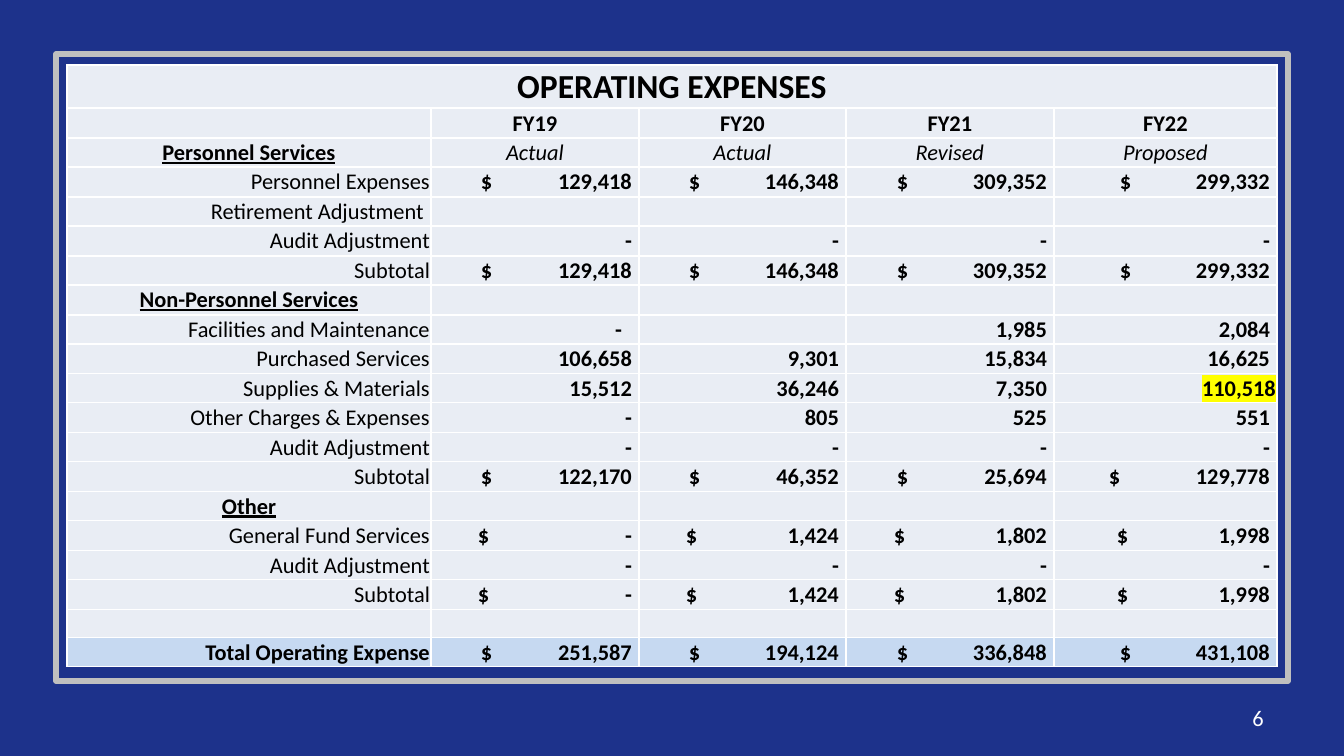
"""Build the operating expenses slide."""
import dataclasses

import lxml.etree
import pptx
import pptx.dml.color
import pptx.enum.shapes
import pptx.enum.text
import pptx.oxml.ns
import pptx.util

ALIGN = pptx.enum.text.PP_ALIGN
MIDDLE = pptx.enum.text.MSO_ANCHOR.MIDDLE
qn = pptx.oxml.ns.qn


@dataclasses.dataclass(frozen=True)
class Theme:
    """Colours, font and type sizes of the slide."""
    background: str = "1D328B"
    frame: str = "BFBFBF"
    cell: str = "E9EDF4"
    total: str = "C6D9F1"
    rule: str = "FFFFFF"
    ink: str = "000000"
    page: str = "FFFFFF"
    marker: str = "FFFF00"
    font: str = "Calibri"
    heading: int = 18
    body: int = 12
    spacer: int = 10


THEME = Theme()
COLUMNS = (364, 208, 207, 208, 223)
HEIGHTS = [43] + [30, 29] * 8 + [30, 28, 29]
EDGE, AMOUNT_EDGE, DASH_EDGE = 1, 7, 17

SIGNS = (50, 50, 51, 66)
SUBTOTAL_SIGNS = (50, 50, 51, 55)
OTHER_SIGNS = (47, 47, 48, 63)

YEARS = ("FY19", "FY20", "FY21", "FY22")
STAGES = ("Actual", "Actual", "Revised", "Proposed")
PERSONNEL = ("$ 129,418", "$ 146,348", "$ 309,352", "$ 299,332")
OTHER = ("$ -", "$ 1,424", "$ 1,802", "$ 1,998")
BLANK = ("",) * 4
DASHES = ("-",) * 4
LINES = (
    ("Personnel Expenses", PERSONNEL, SIGNS),
    ("Retirement Adjustment", BLANK, SIGNS),
    ("Audit Adjustment", DASHES, SIGNS),
    ("Subtotal", PERSONNEL, SIGNS),
    ("Non-Personnel Services", BLANK, SIGNS),
    ("Facilities and Maintenance", ("-", "", "1,985", "2,084"), SIGNS),
    ("Purchased Services", ("106,658", "9,301", "15,834", "16,625"), SIGNS),
    ("Supplies & Materials", ("15,512", "36,246", "7,350", "110,518"), SIGNS),
    ("Other Charges & Expenses", ("-", "805", "525", "551"), SIGNS),
    ("Audit Adjustment", DASHES, SIGNS),
    ("Subtotal", ("$ 122,170", "$ 46,352", "$ 25,694", "$ 129,778"), SUBTOTAL_SIGNS),
    ("Other", BLANK, SIGNS),
    ("General Fund Services", OTHER, OTHER_SIGNS),
    ("Audit Adjustment", DASHES, SIGNS),
    ("Subtotal", OTHER, OTHER_SIGNS),
    ("", BLANK, SIGNS),
    ("Total Operating Expense",
     ("$ 251,587", "$ 194,124", "$ 336,848", "$ 431,108"), SIGNS),
)
SECTIONS = ("Personnel Services", "Non-Personnel Services", "Other")


def px(length):
    """Turn px into EMU."""
    return pptx.util.Emu(round(length * 9144000 / 1344))


def rgb(value):
    """Turn a hex string into a colour."""
    return pptx.dml.color.RGBColor.from_string(value)


def put_text(frame, text, size=THEME.body, color=THEME.ink, align=ALIGN.RIGHT,
             bold=False, italic=False, underline=False, marker=None, tabs=()):
    """Write one formatted paragraph into a text frame."""
    paragraph = frame.paragraphs[0]
    paragraph.alignment = align
    if not text:
        lxml.etree.SubElement(paragraph._p, qn("a:endParaRPr"), sz=str(size * 100))
        return
    if tabs:
        stops = lxml.etree.SubElement(paragraph._p.get_or_add_pPr(), qn("a:tabLst"))
        for position, side in tabs:
            lxml.etree.SubElement(stops, qn("a:tab"), pos=str(px(position)), algn=side)
    run = paragraph.add_run()
    run.text = text
    font = run.font
    font.name, font.size = THEME.font, pptx.util.Pt(size)
    font.bold, font.italic, font.underline = bold, italic, underline
    font.color.rgb = rgb(color)
    if marker:
        highlight = lxml.etree.Element(qn("a:highlight"))
        lxml.etree.SubElement(highlight, qn("a:srgbClr"), val=marker)
        run._r.rPr.find(qn("a:solidFill")).addnext(highlight)


class SlideBuilder:
    """Hold the theme and the current slide."""

    def __init__(self, slide, theme):
        """Paint the background of the slide."""
        self.slide, self.theme = slide, theme
        slide.background.fill.solid()
        slide.background.fill.fore_color.rgb = rgb(theme.background)

    def frame(self, *box):
        """Draw the outline around the table."""
        border = self.slide.shapes.add_shape(
            pptx.enum.shapes.MSO_SHAPE.RECTANGLE, *map(px, box))
        border.shadow.inherit = False
        border.fill.background()
        border.line.color.rgb = rgb(self.theme.frame)
        border.line.width = pptx.util.Pt(3)

    def page_number(self, number, *box):
        """Write the page number."""
        page = self.slide.shapes.add_textbox(*map(px, box)).text_frame
        page.word_wrap = True
        page.vertical_anchor = MIDDLE
        put_text(page, number, color=self.theme.page)

    def table(self, left, top):
        """Add the empty table and return it."""
        expenses = self.slide.shapes.add_table(
            len(HEIGHTS), len(COLUMNS), px(left), px(top),
            px(sum(COLUMNS)), px(sum(HEIGHTS))).table
        expenses.first_row = expenses.horz_banding = False
        for column, width in zip(expenses.columns, COLUMNS):
            column.width = px(width)
        for row, height in zip(expenses.rows, HEIGHTS):
            row.height = px(height)
        return expenses

    def cell(self, cell, text, fill=THEME.cell, edge=EDGE, **text_format):
        """Fill, rule and write one cell."""
        cell.vertical_anchor = MIDDLE
        cell.margin_left, cell.margin_right = px(EDGE), px(edge)
        cell.margin_top, cell.margin_bottom = px(EDGE), 0
        cell.fill.solid()
        cell.fill.fore_color.rgb = rgb(fill)
        for place, side in enumerate(("lnL", "lnR", "lnT", "lnB")):
            rule = lxml.etree.Element(qn(f"a:{side}"), w=str(pptx.util.Pt(1)))
            paint = lxml.etree.SubElement(rule, qn("a:solidFill"))
            lxml.etree.SubElement(paint, qn("a:srgbClr"), val=self.theme.rule)
            cell._tc.tcPr.insert(place, rule)
        put_text(cell.text_frame, text, **text_format)

    def label(self, cell, text, **text_format):
        """Write a section heading or a line label."""
        if text in SECTIONS:
            text_format.update(align=ALIGN.CENTER, bold=True, underline=True)
        edge = AMOUNT_EDGE if text == "Retirement Adjustment" else EDGE
        self.cell(cell, text, edge=edge, **text_format)

    def amount(self, cell, text, width, sign, **text_format):
        """Write an amount, with its dollar sign on a tab stop of its own."""
        if text.startswith("$"):
            text = "\t" + text.replace(" ", "\t")
            text_format.update(align=ALIGN.LEFT, tabs=(
                (sign - EDGE, "l"), (width - AMOUNT_EDGE - EDGE, "r")))
        self.cell(cell, text, bold=True, **text_format)


def main():
    """Build and save the slide."""
    deck = pptx.Presentation()
    deck.slide_width, deck.slide_height = px(1344), px(756)
    builder = SlideBuilder(deck.slides.add_slide(deck.slide_layouts[6]), THEME)
    builder.frame(56, 54, 1232, 627)
    builder.page_number("6", 964, 698, 313, 40)

    expenses = builder.table(67, 65)
    expenses.cell(0, 0).merge(expenses.cell(0, len(COLUMNS) - 1))
    builder.cell(expenses.cell(0, 0), "OPERATING EXPENSES", size=THEME.heading,
                 bold=True, align=ALIGN.CENTER)
    builder.label(expenses.cell(1, 0), "")
    builder.label(expenses.cell(2, 0), SECTIONS[0])
    for column, (year, stage) in enumerate(zip(YEARS, STAGES), 1):
        builder.cell(expenses.cell(1, column), year, bold=True, align=ALIGN.CENTER)
        builder.cell(expenses.cell(2, column), stage, italic=True, align=ALIGN.CENTER)

    for row, (label, amounts, signs) in enumerate(LINES, 3):
        is_total = label.startswith("Total")
        look = {"fill": THEME.total if is_total else THEME.cell,
                "size": THEME.body if label else THEME.spacer}
        builder.label(expenses.cell(row, 0), label, bold=is_total, **look)
        for column, (amount, sign) in enumerate(zip(amounts, signs), 1):
            marked = amount == "110,518"
            shifted = label.startswith("Facilities") and amount == "-"
            edge = EDGE if marked or "$" in amount else AMOUNT_EDGE
            builder.amount(expenses.cell(row, column), amount, COLUMNS[column], sign,
                           edge=DASH_EDGE if shifted else edge,
                           marker=THEME.marker if marked else None, **look)
    deck.save("out.pptx")


if __name__ == "__main__":
    main()
